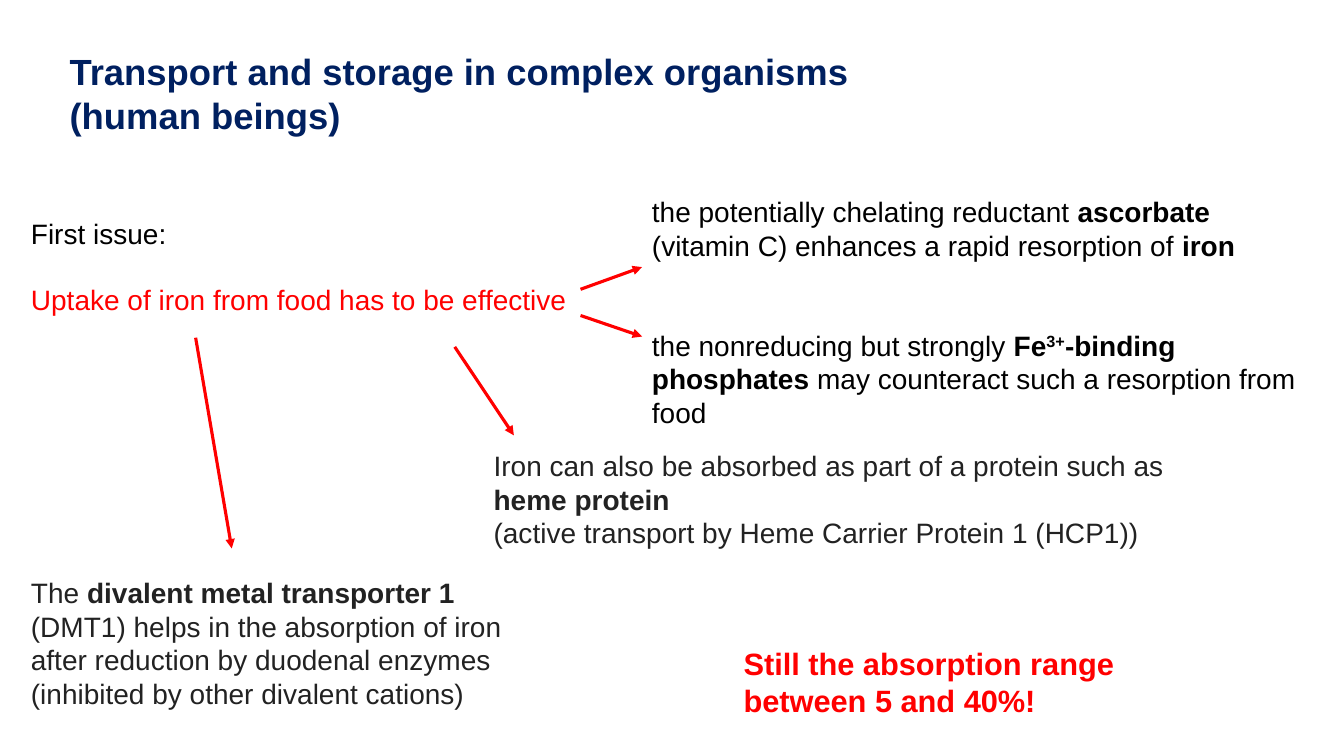
from lxml import etree
from pptx import Presentation
from pptx import util as u
from pptx.dml.color import RGBColor
from pptx.enum import shapes, text
from pptx.oxml.ns import qn

NAVY = RGBColor(0x00, 0x20, 0x60)
BLACK = RGBColor(0x00, 0x00, 0x00)
CHARCOAL = RGBColor(0x22, 0x22, 0x22)
RED = RGBColor(0xFF, 0x00, 0x00)
PLAIN, BOLD, SUPERSCRIPT = "plain", "bold", "superscript"


class IronSlide:
    """Draws titles, text boxes and arrows in one style on one slide."""

    font_name = "Arial"
    body_size = 20
    arrow_width = 2.25

    def __init__(self, presentation):
        """Add a title-only slide to the presentation."""
        self.slide = presentation.slides.add_slide(presentation.slide_layouts[5])

    def style(self, paragraph, size, color, bold=None):
        """Set the font and left alignment of a whole paragraph."""
        paragraph.alignment = text.PP_ALIGN.LEFT
        font = paragraph.font
        font.name, font.size, font.bold = self.font_name, u.Pt(size), bold
        font.color.rgb = color

    def title(self, words, left, top, width, height):
        """Place and format the title placeholder."""
        shape = self.slide.shapes.title
        shape.left, shape.top = u.Cm(left), u.Cm(top)
        shape.width, shape.height = u.Cm(width), u.Cm(height)
        frame = shape.text_frame
        frame.text = words
        frame.auto_size = text.MSO_AUTO_SIZE.NONE
        frame.vertical_anchor = text.MSO_ANCHOR.TOP
        self.style(frame.paragraphs[0], 26, NAVY, True)

    def text_box(self, paragraphs, left, top, width, height, color, size=body_size, gap=0):
        """Add wrapped text made of paragraphs of (words, emphasis) runs."""
        shape = self.slide.shapes.add_textbox(u.Cm(left), u.Cm(top), u.Cm(width), u.Cm(height))
        frame = shape.text_frame
        frame.word_wrap = True
        for index, runs in enumerate(paragraphs):
            paragraph = frame.add_paragraph() if index else frame.paragraphs[0]
            if index and gap:
                paragraph.space_before = u.Pt(gap)
            self.style(paragraph, size, color)
            for words, emphasis in runs:
                run = paragraph.add_run()
                run.text = words
                if emphasis != PLAIN:
                    run.font.bold = True
                if emphasis == SUPERSCRIPT:
                    run._r.get_or_add_rPr().set("baseline", "30000")
        return frame

    def arrow(self, start_x, start_y, end_x, end_y):
        """Add a red arrow that points at its end."""
        connector = self.slide.shapes.add_connector(
            shapes.MSO_CONNECTOR.STRAIGHT, u.Cm(start_x), u.Cm(start_y), u.Cm(end_x), u.Cm(end_y))
        connector.line.color.rgb = RED
        connector.line.width = u.Pt(self.arrow_width)
        properties = connector._element.spPr
        etree.SubElement(properties.find(qn("a:ln")), qn("a:tailEnd"), type="triangle")
        etree.SubElement(properties, qn("a:effectLst"))


def main():
    """Build and save the iron uptake slide."""
    presentation = Presentation()
    presentation.slide_width, presentation.slide_height = u.Cm(33.87), u.Cm(19.05)
    slide = IronSlide(presentation)

    slide.title("Transport and storage in complex organisms (human beings)", 1.5, 1.12, 20.35, 2.49)
    uptake = slide.text_box(
        [[("First issue:", PLAIN)], [("Uptake of iron from food has to be effective", PLAIN)]],
        0.53, 5.33, 30.73, 2.82, BLACK, gap=23)
    uptake.paragraphs[1].font.color.rgb = RED
    slide.text_box(
        [[("the potentially chelating reductant ", PLAIN), ("ascorbate", BOLD),
          (" (vitamin C) enhances a rapid resorption of ", PLAIN), ("iron", BOLD)]],
        16.18, 4.78, 16.94, 1.96, BLACK)
    slide.text_box(
        [[("the nonreducing but strongly ", PLAIN), ("Fe", BOLD), ("3+", SUPERSCRIPT),
          ("-binding phosphates ", BOLD), ("may counteract such a resorption from food", PLAIN)]],
        16.18, 8.15, 16.94, 2.82, BLACK)
    slide.text_box(
        [[("Iron can also be absorbed as part of a protein such as ", PLAIN), ("heme protein", BOLD)],
         [("(active transport by Heme Carrier Protein 1 (HCP1))", PLAIN)]],
        12.19, 11.18, 18.14, 2.82, CHARCOAL)
    slide.text_box(
        [[("The ", PLAIN), ("divalent metal transporter 1", BOLD),
          (" (DMT1) helps in the absorption of iron after reduction by duodenal enzymes", PLAIN)],
         [("(inhibited by other divalent cations)", PLAIN)]],
        0.53, 14.38, 12.8, 3.68, CHARCOAL)
    slide.text_box(
        [[("Still the absorption range between 5 and 40%!", BOLD)]],
        18.49, 16.13, 11.84, 2.13, RED, size=22)

    for ends in [(14.63, 7.29, 16.18, 6.73), (14.63, 7.95, 16.18, 8.48),
                 (11.46, 8.74, 12.95, 10.97), (4.93, 8.51, 5.84, 13.82)]:
        slide.arrow(*ends)

    presentation.save("out.pptx")


if __name__ == "__main__":
    main()
